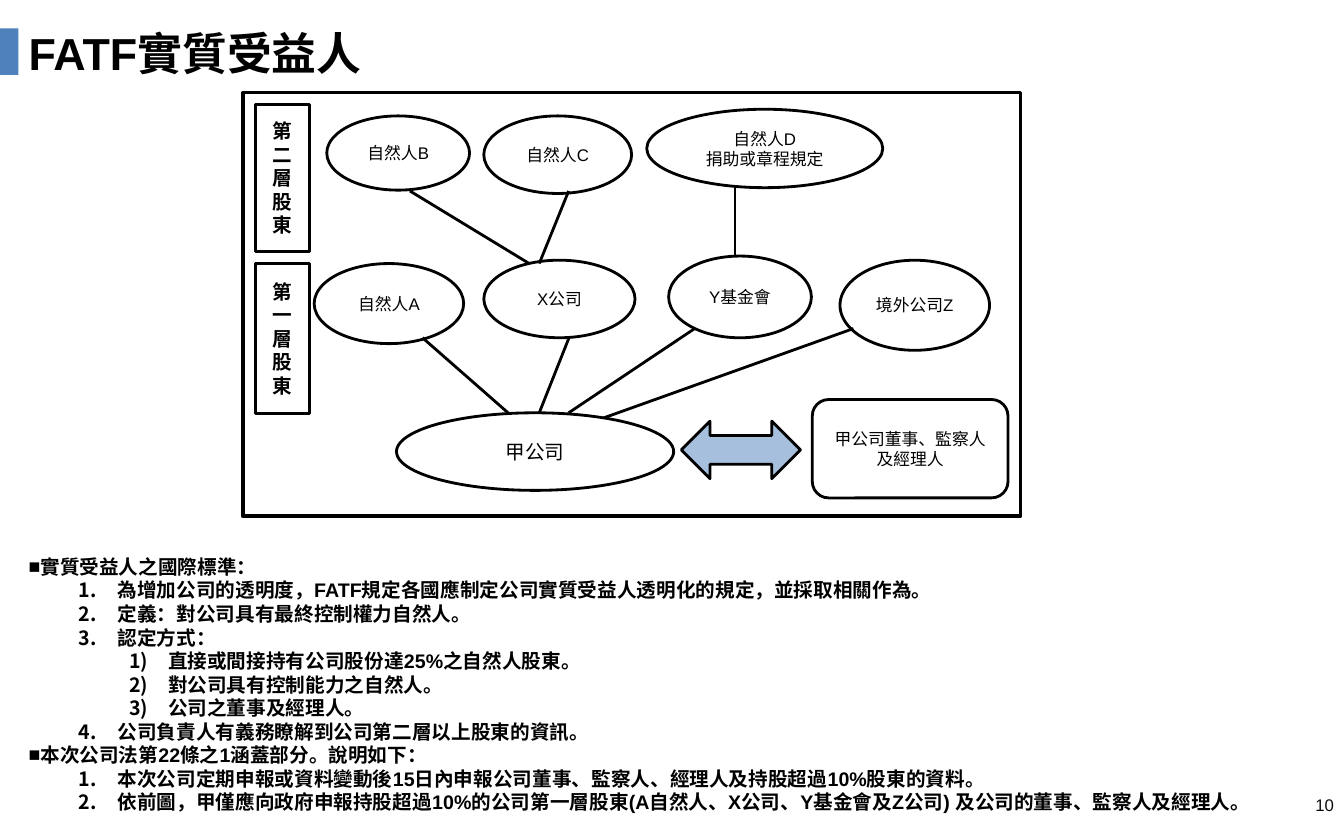
import pptx
import pptx.util
import pptx.dml.color
import pptx.enum.shapes
import pptx.enum.text
import pptx.oxml.ns
import lxml.etree

WIDE, HIGH = 13.33, 8.27
COLS, ROWS = 160, 100
KIND = pptx.enum.shapes.MSO_SHAPE
ALIGN = pptx.enum.text.PP_ALIGN
ANCHOR = pptx.enum.text.MSO_ANCHOR
FIT = pptx.enum.text.MSO_AUTO_SIZE

OVALS = [
    ("自然人B", 38.9, 13.9, 17, 8.9, 12),
    ("自然人C", 57.6, 13.9, 17.6, 9.3, 12),
    ("自然人D\n捐助或章程規定", 77, 13.1, 28.1, 9.4, 12),
    ("自然人A", 37.4, 31.6, 17.8, 9.6, 12),
    ("X公司", 57.6, 31.2, 18, 9.3, 12),
    ("Y基金會", 79.6, 30.7, 17, 9.8, 12),
    ("境外公司Z", 100, 31.2, 17.8, 10.8, 12),
    ("甲公司", 47.2, 49.5, 33, 9.3, 14),
]
TIERS = [
    ("第二層股\n東", 12.5, 17.7),
    ("第一層\n股東", 31.6, 18),
]
LINKS = [
    (48.8, 22.9, 63, 31.6),
    (67.7, 22.9, 64.2, 31.6),
    (87.5, 22.4, 87.5, 30.7),
    (50.3, 40.5, 60.6, 49.6),
    (67.7, 40.6, 64.2, 49.5),
    (82.7, 39.4, 67.7, 49.5),
    (101.6, 39.4, 71.9, 50.1),
]
ITEMS = [
    (0, "實質受益人之國際標準："),
    (1, "為增加公司的透明度，FATF規定各國應制定公司實質受益人透明化的規定，並採取相關作為。"),
    (1, "定義：對公司具有最終控制權力自然人。"),
    (1, "認定方式："),
    (2, "直接或間接持有公司股份達25%之自然人股東。"),
    (2, "對公司具有控制能力之自然人。"),
    (2, "公司之董事及經理人。"),
    (1, "公司負責人有義務瞭解到公司第二層以上股東的資訊。"),
    (0, "本次公司法第22條之1涵蓋部分。說明如下："),
    (1, "本次公司定期申報或資料變動後15日內申報公司董事、監察人、經理人及持股超過10%股東的資料。"),
    (1, "依前圖，甲僅應向政府申報持股超過10%的公司第一層股東"
        "(A自然人、X公司、Y基金會及Z公司) 及公司的董事、監察人及經理人。"),
]
MARKS = [
    ("a:buChar", {"char": "■"}, 0, 0),
    ("a:buAutoNum", {"type": "arabicPeriod"}, 10.6, -4.6),
    ("a:buAutoNum", {"type": "arabicParenR"}, 16.6, -4.6),
]


def col(n):
    return pptx.util.Inches(WIDE * n / COLS)


def row(n):
    return pptx.util.Inches(HIGH * n / ROWS)


def area(x, y, w, h):
    return col(x), row(y), col(w), row(h)


def color(code):
    return pptx.dml.color.RGBColor.from_string(code)


def apply(item, style):
    for name, value in style.items():
        setattr(item, name, value)


def node(parent, tag, attrs):
    child = lxml.etree.SubElement(parent, pptx.oxml.ns.qn(tag))
    for name, value in attrs.items():
        child.set(name, value)


def write(shape, text, size, bold=False, align=ALIGN.CENTER, anchor=ANCHOR.MIDDLE):
    frame = shape.text_frame
    frame.text = text
    apply(frame, {"word_wrap": True, "auto_size": FIT.NONE, "vertical_anchor": anchor})
    for para in frame.paragraphs:
        apply(para, {"alignment": align, "space_before": pptx.util.Pt(0)})
        for run in para.runs:
            apply(run.font, {"name": "Arial", "size": pptx.util.Pt(size), "bold": bold})
            run.font.color.rgb = color("000000")


def fill(shape, code, alpha=None):
    shape.fill.solid()
    shape.fill.fore_color.rgb = color(code)
    if alpha:
        tint = shape.fill._xPr.find(".//" + pptx.oxml.ns.qn("a:srgbClr"))
        node(tint, "a:alpha", {"val": str(alpha * 1000)})


def stroke(item, width):
    item.line.color.rgb = color("000000")
    item.line.width = pptx.util.Pt(width)


def box(slide, kind, place, width=2):
    shape = slide.shapes.add_shape(kind, *area(*place))
    shape.shadow.inherit = False
    shape.fill.background()
    if width:
        stroke(shape, width)
    else:
        shape.line.fill.background()
    return shape


def link(slide, x1, y1, x2, y2):
    line = slide.shapes.add_connector(
        pptx.enum.shapes.MSO_CONNECTOR.STRAIGHT, col(x1), row(y1), col(x2), row(y2))
    stroke(line, 2)
    node(line._element.spPr, "a:effectLst", {})


def move(shape, place):
    apply(shape, dict(zip(("left", "top", "width", "height"), area(*place))))


def chart(slide):
    box(slide, KIND.RECTANGLE, (28.9, 11.1, 92.6, 50.8), 2.5)
    for ends in LINKS:
        link(slide, *ends)
    for text, x, y, w, h, size in OVALS:
        write(box(slide, KIND.OVAL, (x, y, w, h)), text, size)
    for text, y, h in TIERS:
        write(box(slide, KIND.RECTANGLE, (30.4, y, 6.5, h)), text, 14, True)
    arrow = box(slide, KIND.LEFT_RIGHT_ARROW, (81.1, 50.5, 14.2, 6.9))
    fill(arrow, "4F81BD", 50)
    board = box(slide, KIND.ROUNDED_RECTANGLE, (96.7, 47.9, 23.3, 11.8))
    write(board, "甲公司董事、監察人及經理人", 12)


def notes(body):
    move(body, (2.2, 65.8, 151.6, 32.5))
    write(body, "\n".join(text for level, text in ITEMS), 14, True, ALIGN.LEFT)
    for para, (level, text) in zip(body.text_frame.paragraphs, ITEMS):
        tag, attrs, margin, indent = MARKS[level]
        para.level = level
        props = para._p.get_or_add_pPr()
        props.set("marL", str(col(margin)))
        props.set("indent", str(col(indent)))
        node(props, tag, attrs)


def main():
    deck = pptx.Presentation()
    apply(deck, {"slide_width": col(COLS), "slide_height": row(ROWS)})
    slide = deck.slides.add_slide(deck.slide_layouts[1])
    title, body = slide.placeholders
    fill(box(slide, KIND.RECTANGLE, (0, 3.4, 2.2, 5.6), 0), "4F81BD")
    move(title, (2.2, 2.4, 70.2, 7.7))
    write(title, "FATF實質受益人", 32, True, ALIGN.LEFT)
    chart(slide)
    notes(body)
    page = slide.shapes.add_textbox(*area(122.6, 94.7, 37.4, 5.3))
    write(page, "10", 12, False, ALIGN.RIGHT, ANCHOR.TOP)
    page.text_frame.paragraphs[0].runs[0].font.color.rgb = color("0D0D0D")
    deck.save("out.pptx")


if __name__ == "__main__":
    main()
